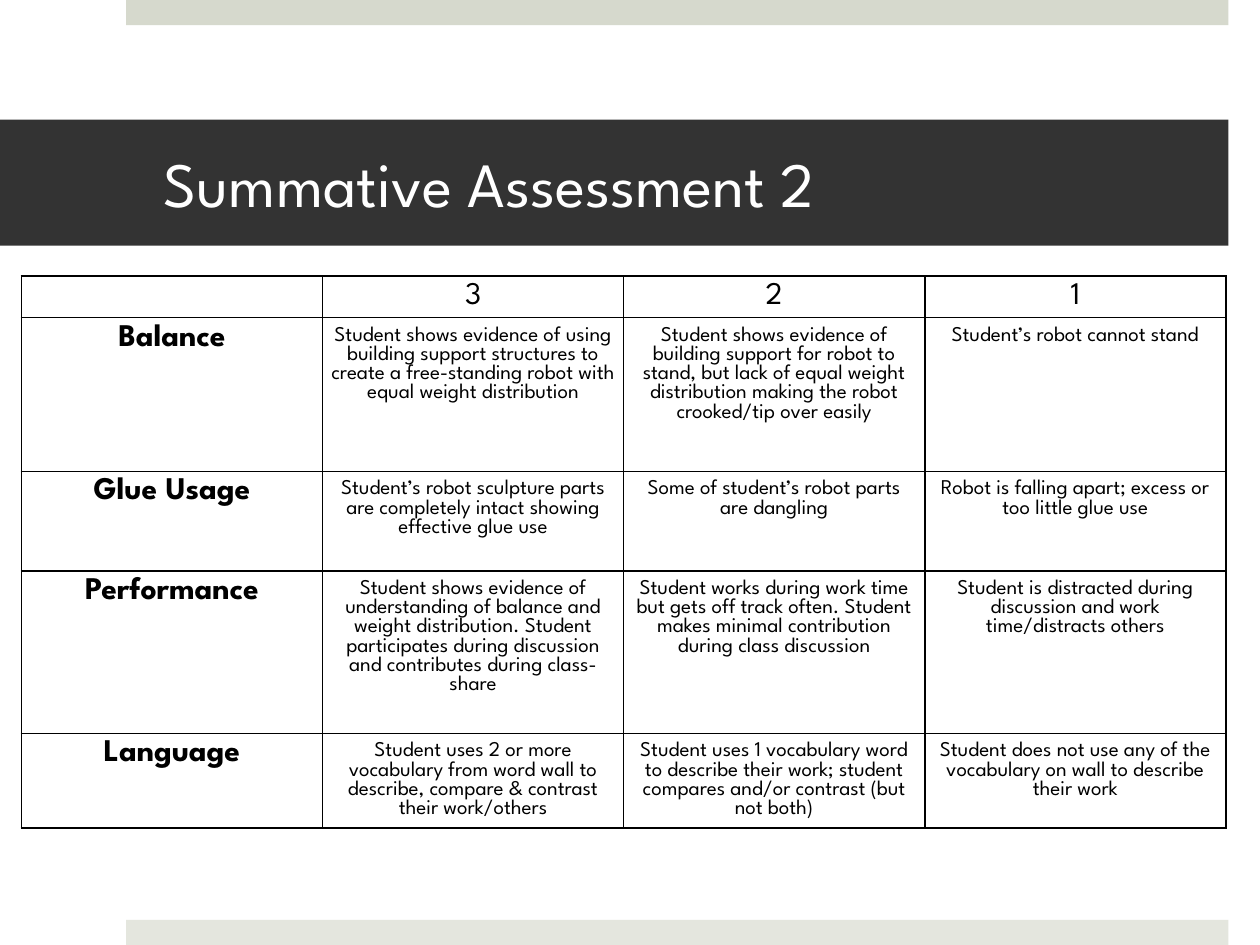
from lxml import etree
from pptx import Presentation
from pptx.dml.color import RGBColor
from pptx.enum.shapes import MSO_SHAPE
from pptx.enum.text import MSO_ANCHOR, MSO_AUTO_SIZE, PP_ALIGN
from pptx.oxml.ns import qn
from pptx.util import Inches, Pt

RECTANGLE = MSO_SHAPE.RECTANGLE
MIDDLE = MSO_ANCHOR.MIDDLE
LEFT, CENTER = PP_ALIGN.LEFT, PP_ALIGN.CENTER
NO_AUTOFIT = MSO_AUTO_SIZE.NONE

WIDTH, HEIGHT = 10, 7.5
BAR_LEFT, RIGHT_EDGE, BAR_HEIGHT = 1, 9.75, 0.2
TITLE_ONLY = 5
FONT = "League Spartan"
COLORS = {
    "top bar": "D6D9CD",
    "bottom bar": "E4E6DE",
    "band": "333333",
    "title": "FFFFFF",
    "ink": "000000",
}

COLUMN_WIDTH = 2.39
ROW_HEIGHTS = [0.33, 1.22, 0.79, 1.29, 0.75]
RUBRIC = [
    ["", "3", "2", "1"],
    ["Balance",
     "Student shows evidence of using building support structures to create "
     "a free-standing robot with equal weight distribution",
     "Student shows evidence of building support for robot to stand, but lack "
     "of equal weight distribution making the robot crooked/tip over easily",
     "Student’s robot cannot stand"],
    ["Glue Usage",
     "Student’s robot sculpture parts are completely intact showing effective glue use",
     "Some of student’s robot parts are dangling",
     "Robot is falling apart; excess or too little glue use"],
    ["Performance",
     "Student shows evidence of understanding of balance and weight distribution. "
     "Student participates during discussion and contributes during class-share",
     "Student works during work time but gets off track often. Student makes "
     "minimal contribution during class discussion",
     "Student is distracted during discussion and work time/distracts others"],
    ["Language",
     "Student uses 2 or more vocabulary from word wall to describe, compare & "
     "contrast their work/others",
     "Student uses 1 vocabulary word to describe their work; student compares "
     "and/or contrast (but not both)",
     "Student does not use any of the vocabulary on wall to describe their work"],
]


def color(name):
    return RGBColor.from_string(COLORS[name])


def format_text(para, size, color_name, align, bold=False):
    para.alignment = align
    for run in para.runs:
        run.font.name = FONT
        run.font.size = Pt(size)
        run.font.bold = bold
        run.font.color.rgb = color(color_name)


def add_bar(page, top, color_name):
    bar = page.shapes.add_shape(
        RECTANGLE, Inches(BAR_LEFT), Inches(top),
        Inches(RIGHT_EDGE - BAR_LEFT), Inches(BAR_HEIGHT))
    bar.shadow.inherit = False
    bar.fill.solid()
    bar.fill.fore_color.rgb = color(color_name)
    bar.line.fill.background()


def set_title(page, text):
    title = page.shapes.title
    title.left, title.top = Inches(0), Inches(0.95)
    title.width, title.height = Inches(RIGHT_EDGE), Inches(1)
    title.fill.solid()
    title.fill.fore_color.rgb = color("band")
    frame = title.text_frame
    frame.text = text
    frame.word_wrap = True
    frame.auto_size = NO_AUTOFIT
    frame.vertical_anchor = MIDDLE
    frame.margin_left, frame.margin_right = Inches(1.3), Inches(0.3)
    frame.margin_top = frame.margin_bottom = Inches(0.05)
    format_text(frame.paragraphs[0], 36, "title", LEFT)


def set_borders(cell):
    properties = cell._tc.get_or_add_tcPr()
    for side in ("a:lnL", "a:lnR", "a:lnT", "a:lnB"):
        line = etree.SubElement(properties, qn(side), w=str(Pt(1)))
        fill = etree.SubElement(line, qn("a:solidFill"))
        etree.SubElement(fill, qn("a:srgbClr"), val=COLORS["ink"])


def fill_cell(cell, text, is_header, is_criterion):
    set_borders(cell)
    cell.fill.background()
    cell.text = text
    para = cell.text_frame.paragraphs[0]
    is_label = is_header or is_criterion
    format_text(para, 18 if is_label else 12, "ink", CENTER,
                bold=is_criterion and not is_header)
    if not text:
        # A small end mark keeps the empty cell from stretching its row
        etree.SubElement(para._p, qn("a:endParaRPr"), sz="1200")
    if not is_label:
        cell.margin_left = cell.margin_right = Inches(0.07)
        cell.margin_top = cell.margin_bottom = Inches(0.07)


def add_rubric(page):
    row_count, column_count = len(RUBRIC), len(RUBRIC[0])
    frame = page.shapes.add_table(
        row_count, column_count, Inches(0.17), Inches(2.19),
        Inches(COLUMN_WIDTH * column_count), Inches(sum(ROW_HEIGHTS)))
    table = frame.table
    table.first_row = table.horz_banding = False
    for column in table.columns:
        column.width = Inches(COLUMN_WIDTH)
    for row_index, texts in enumerate(RUBRIC):
        table.rows[row_index].height = Inches(ROW_HEIGHTS[row_index])
        for column_index, text in enumerate(texts):
            fill_cell(table.cell(row_index, column_index), text,
                      row_index == 0, column_index == 0)


def main():
    deck = Presentation()
    deck.slide_width, deck.slide_height = Inches(WIDTH), Inches(HEIGHT)
    page = deck.slides.add_slide(deck.slide_layouts[TITLE_ONLY])

    # Bars along the top and bottom edges
    add_bar(page, 0, "top bar")
    add_bar(page, HEIGHT - BAR_HEIGHT, "bottom bar")

    # Title band and scoring table
    set_title(page, "Summative Assessment 2")
    add_rubric(page)

    deck.save("out.pptx")


if __name__ == "__main__":
    main()
